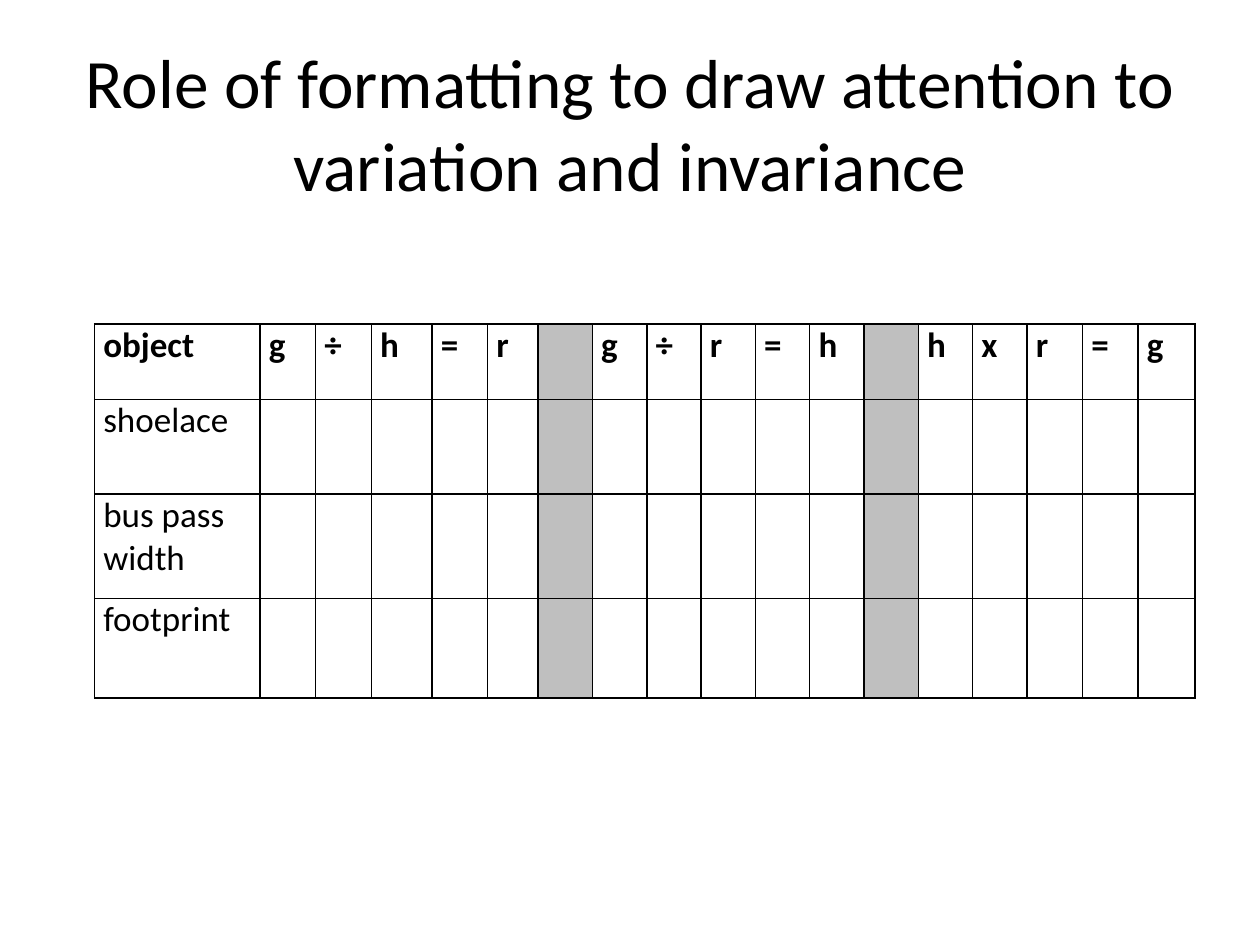
from dataclasses import dataclass

import pptx
import pptx.dml.color
import pptx.enum.text
import pptx.oxml
import pptx.oxml.ns
import pptx.util


@dataclass(frozen=True)
class Theme:
    font: str = "Calibri"
    ink: str = "000000"
    paper: str = "FFFFFF"
    divider: str = "BFBFBF"
    title_size: float = 39.6
    table_size: float = 20
    border_width: float = 1


THEME = Theme()
SLIDE_WIDTH = pptx.util.Inches(10)
SLIDE_HEIGHT = pptx.util.Inches(7.5)

TITLE = "Role of formatting to draw attention to variation and invariance\v"
EQUATIONS = ["g÷h=r", "g÷r=h", "hxr=g"]
OBJECTS = ["shoelace", "bus pass width", "footprint"]

TABLE_WIDTH = 8.74
COLUMN_WEIGHTS = [1.31, 0.44, 0.44, 0.48, 0.44, 0.4] + [0.43] * 9 + [0.44, 0.44, 0.45]
ROW_HEIGHTS = [0.6, 0.75, 0.83, 0.79]


def rgb(color):
    return pptx.dml.color.RGBColor.from_string(color)


def set_all(target, values):
    for name, value in values.items():
        setattr(target, name, value)


def style_font(font, size, bold=False):
    set_all(font, {"name": THEME.font, "size": pptx.util.Pt(size), "bold": bold})
    font.color.rgb = rgb(THEME.ink)


def add_title(slide):
    title = slide.shapes.title
    set_all(title, {
        "left": int(SLIDE_WIDTH * 0.05), "top": int(SLIDE_HEIGHT * 0.09),
        "width": int(SLIDE_WIDTH * 0.9), "height": int(SLIDE_HEIGHT / 6),
    })
    frame = title.text_frame
    set_all(frame, {
        "text": TITLE, "word_wrap": True,
        "auto_size": pptx.enum.text.MSO_AUTO_SIZE.NONE,
        "vertical_anchor": pptx.enum.text.MSO_ANCHOR.MIDDLE,
    })
    heading = frame.paragraphs[0]
    heading.alignment = pptx.enum.text.PP_ALIGN.CENTER
    style_font(heading.font, THEME.title_size)
    for run in heading.runs:
        style_font(run.font, THEME.title_size)


def add_borders(cell):
    properties = cell._tc.get_or_add_tcPr()
    for side in ("lnL", "lnR", "lnT", "lnB"):
        properties.append(pptx.oxml.parse_xml(
            f'<a:{side} {pptx.oxml.ns.nsdecls("a")} w="{pptx.util.Pt(THEME.border_width)}">'
            f'<a:solidFill><a:srgbClr val="{THEME.ink}"/></a:solidFill></a:{side}>'))


def format_cell(cell, text, fill, bold):
    add_borders(cell)
    cell.fill.solid()
    cell.fill.fore_color.rgb = rgb(fill)
    inset = pptx.util.Inches(0.07)
    set_all(cell, {"margin_left": inset, "margin_right": inset,
                   "margin_top": 0, "margin_bottom": 0})
    if text:
        cell.text = text
        style_font(cell.text_frame.paragraphs[0].runs[0].font, THEME.table_size, bold)


def add_equation_table(slide):
    """One row per object; shaded columns divide the three equations."""
    symbols = " ".join(EQUATIONS)
    headings = ["object"] + [symbol.strip() for symbol in symbols]
    rows = [headings] + [[name] + [""] * len(symbols) for name in OBJECTS]
    table = slide.shapes.add_table(
        len(rows), len(headings), pptx.util.Inches(0.75), pptx.util.Inches(2.57),
        pptx.util.Inches(TABLE_WIDTH), pptx.util.Inches(sum(ROW_HEIGHTS))).table
    set_all(table, {"first_row": False, "horz_banding": False})
    for column, weight in zip(table.columns, COLUMN_WEIGHTS):
        column.width = pptx.util.Inches(TABLE_WIDTH * weight / sum(COLUMN_WEIGHTS))
    for row, height in zip(table.rows, ROW_HEIGHTS):
        row.height = pptx.util.Inches(height)
    for row_index, row in enumerate(rows):
        for column_index, text in enumerate(row):
            fill = THEME.paper if headings[column_index] else THEME.divider
            format_cell(table.cell(row_index, column_index), text, fill, row_index == 0)


def main():
    presentation = pptx.Presentation()
    set_all(presentation, {"slide_width": SLIDE_WIDTH, "slide_height": SLIDE_HEIGHT})
    slide = presentation.slides.add_slide(presentation.slide_layouts.get_by_name("Title Only"))
    add_title(slide)
    add_equation_table(slide)
    presentation.save("out.pptx")


if __name__ == "__main__":
    main()
